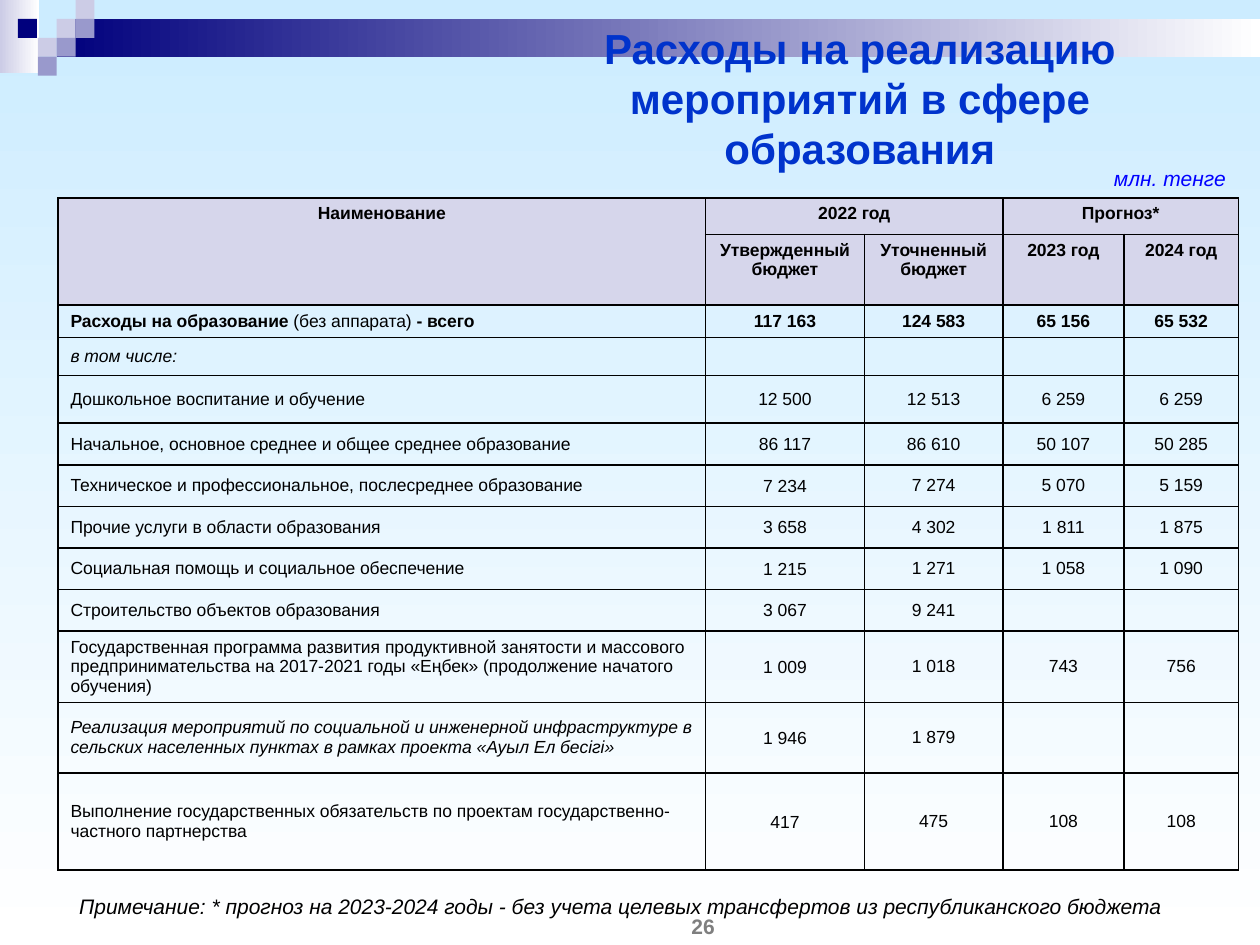
from lxml.etree import SubElement
from pptx import Presentation
from pptx.dml.color import RGBColor
from pptx.enum.shapes import MSO_SHAPE
from pptx.enum.text import MSO_ANCHOR, PP_ALIGN
from pptx.oxml.ns import qn
from pptx.util import Inches, Pt

SKY = RGBColor(0xCC, 0xEC, 0xFF)
WHITE = RGBColor(0xFF, 0xFF, 0xFF)
BLACK = RGBColor(0, 0, 0)
NAVY = RGBColor(0, 0, 0x7D)
LILAC = RGBColor(0xCC, 0xCC, 0xE6)
VIOLET = RGBColor(0x99, 0x99, 0xCC)
HEADER = RGBColor(0xD6, 0xD6, 0xEB)
TITLE_BLUE = RGBColor(0, 0x33, 0xCC)
UNIT_BLUE = RGBColor(0, 0, 0xFF)
GRAY = RGBColor(0x7F, 0x7F, 0x7F)


def add_run(p, text, size, color, bold=False, italic=False):
    r = p.add_run()
    r.text = text
    r.font.name, r.font.size = "Arial", Pt(size)
    r.font.bold, r.font.italic = bold, italic
    r.font.color.rgb = color


def set_gradient(fill, start, end, angle):
    fill.gradient()
    fill.gradient_angle = angle
    for stop, color in zip(fill.gradient_stops, (start, end)):
        stop.color.rgb = color


prs = Presentation()
prs.slide_width, prs.slide_height = Inches(10), Inches(7.5)
s = prs.slides.add_slide(prs.slide_layouts[5])
set_gradient(s.background.fill, SKY, WHITE, 270)

# Corner ornament: two gradient bands and squares on a grid of one unit
U = 0.15
ornament = [
    (0, 0, 0.31, 0.58, LILAC, WHITE),
    (3 * U, U, 10 - 3 * U, 2 * U, NAVY, WHITE),
]
for col, row, color in [(3, 1, LILAC), (4, 0, LILAC), (4, 1, VIOLET), (2, 2, LILAC),
                        (0.95, 1, NAVY), (3, 2, VIOLET), (2, 3, VIOLET)]:
    ornament.append((col * U, row * U, U, U, color, None))
for x, y, w, h, color, fade in ornament:
    sp = s.shapes.add_shape(MSO_SHAPE.RECTANGLE, Inches(x), Inches(y), Inches(w), Inches(h))
    sp.shadow.inherit = False
    sp.line.fill.background()
    if fade:
        set_gradient(sp.fill, color, fade, 0)
    else:
        sp.fill.solid()
        sp.fill.fore_color.rgb = color

# Title, in front of the ornament
title = s.shapes.title
s.shapes.element.append(title.element)
title.left, title.top, title.width, title.height = map(Inches, (4.17, 0.1, 5.31, 1.35))
tf = title.text_frame
tf.word_wrap = True
tf.vertical_anchor = MSO_ANCHOR.MIDDLE
p = tf.paragraphs[0]
p.alignment = PP_ALIGN.CENTER
add_run(p, "Расходы на реализацию мероприятий в сфере образования", 24, TITLE_BLUE, bold=True)

# Table
COLS = [5.14, 1.26, 1.1, 0.96, 0.91]
ROWS = [0.29, 0.29, 0.56, 0.26, 0.3, 0.38] + [0.33] * 5 + [0.56, 0.56, 0.77]
MERGES = [(0, 0, 0, 4), (1, 0, 2, 0), (1, 1, 1, 2), (1, 3, 1, 4)]
HEADER_ROWS = (1, 2)
TOTAL_ROW = 3
ITALIC_ROWS = (4, 12)
DATA = [
    ["млн. тенге", "", "", "", ""],
    ["Наименование", "2022 год", "", "Прогноз*", ""],
    ["", "Утвержденный бюджет", "Уточненный бюджет", "2023 год", "2024 год"],
    ["Расходы на образование |(без аппарата) |- всего", "117 163", "124 583", "65 156", "65 532"],
    ["в том числе:", "", "", "", ""],
    ["Дошкольное воспитание и обучение", "12 500", "12 513", "6 259", "6 259"],
    ["Начальное, основное среднее и общее среднее образование",
     "86 117", "86 610", "50 107", "50 285"],
    ["Техническое и профессиональное, послесреднее образование",
     "7 234", "7 274", "5 070", "5 159"],
    ["Прочие услуги в области образования", "3 658", "4 302", "1 811", "1 875"],
    ["Социальная помощь и социальное обеспечение", "1 215", "1 271", "1 058", "1 090"],
    ["Строительство объектов образования", "3 067", "9 241", "", ""],
    ["Государственная программа развития продуктивной занятости и массового "
     "предпринимательства на 2017-2021 годы «Еңбек» (продолжение начатого обучения)",
     "1 009", "1 018", "743", "756"],
    ["Реализация мероприятий по социальной и инженерной инфраструктуре в сельских "
     "населенных пунктах в рамках проекта «Ауыл Ел бесігі»", "1 946", "1 879", "", ""],
    ["Выполнение государственных обязательств по проектам "
     "государственно-частного партнерства", "417", "475", "108", "108"],
]
frame = s.shapes.add_table(len(ROWS), len(COLS), Inches(0.46), Inches(1.28),
                           Inches(sum(COLS)), Inches(sum(ROWS)))
table = frame.table
table.first_row = table.horz_banding = False
for column, width in zip(table.columns, COLS):
    column.width = Inches(width)
for row, height in zip(table.rows, ROWS):
    row.height = Inches(height)
for top, left, bottom, right in MERGES:
    table.cell(top, left).merge(table.cell(bottom, right))

for i, texts in enumerate(DATA):
    for j, text in enumerate(texts):
        cell = table.cell(i, j)
        is_header = i in HEADER_ROWS
        cell.vertical_anchor = MSO_ANCHOR.TOP if i < TOTAL_ROW else MSO_ANCHOR.MIDDLE
        if i >= TOTAL_ROW and j == 1:
            cell.margin_left = cell.margin_right = cell.margin_top = Inches(0.01)
            cell.margin_bottom = 0

        tcPr = cell._tc.get_or_add_tcPr()
        for side in ("lnL", "lnR", "lnT", "lnB"):
            ln = SubElement(tcPr, qn("a:" + side), w=str(Pt(1)))
            if i == 0 and side != "lnB":
                SubElement(ln, qn("a:noFill"))
            else:
                solid = SubElement(ln, qn("a:solidFill"))
                SubElement(solid, qn("a:srgbClr"), val=str(BLACK))
        if is_header:
            cell.fill.solid()
            cell.fill.fore_color.rgb = HEADER
        else:
            cell.fill.background()

        p = cell.text_frame.paragraphs[0]
        if not text:
            SubElement(p._p, qn("a:endParaRPr"), sz="1000")
        elif i == 0:
            p.alignment = PP_ALIGN.RIGHT
            add_run(p, text, 12, UNIT_BLUE, italic=True)
        else:
            p.alignment = PP_ALIGN.LEFT if j == 0 and not is_header else PP_ALIGN.CENTER
            for k, part in enumerate(text.split("|")):
                add_run(p, part, 10, BLACK, bold=(is_header or i == TOTAL_ROW) and k != 1,
                        italic=i in ITALIC_ROWS and j == 0)

# Page number and footnote
for box, anchor, text, color, bold in [
    ((4.58, 7.25, 2, 0.25), MSO_ANCHOR.BOTTOM, "26", GRAY, True),
    ((0.43, 7.04, 9, 0.3), MSO_ANCHOR.TOP,
     "Примечание: * прогноз на 2023-2024 годы - без учета целевых трансфертов "
     "из республиканского бюджета", BLACK, False),
]:
    tf = s.shapes.add_textbox(*map(Inches, box)).text_frame
    tf.word_wrap = True
    tf.vertical_anchor = anchor
    p = tf.paragraphs[0]
    p.alignment = PP_ALIGN.CENTER
    add_run(p, text, 12, color, bold=bold, italic=not bold)

prs.save("out.pptx")
